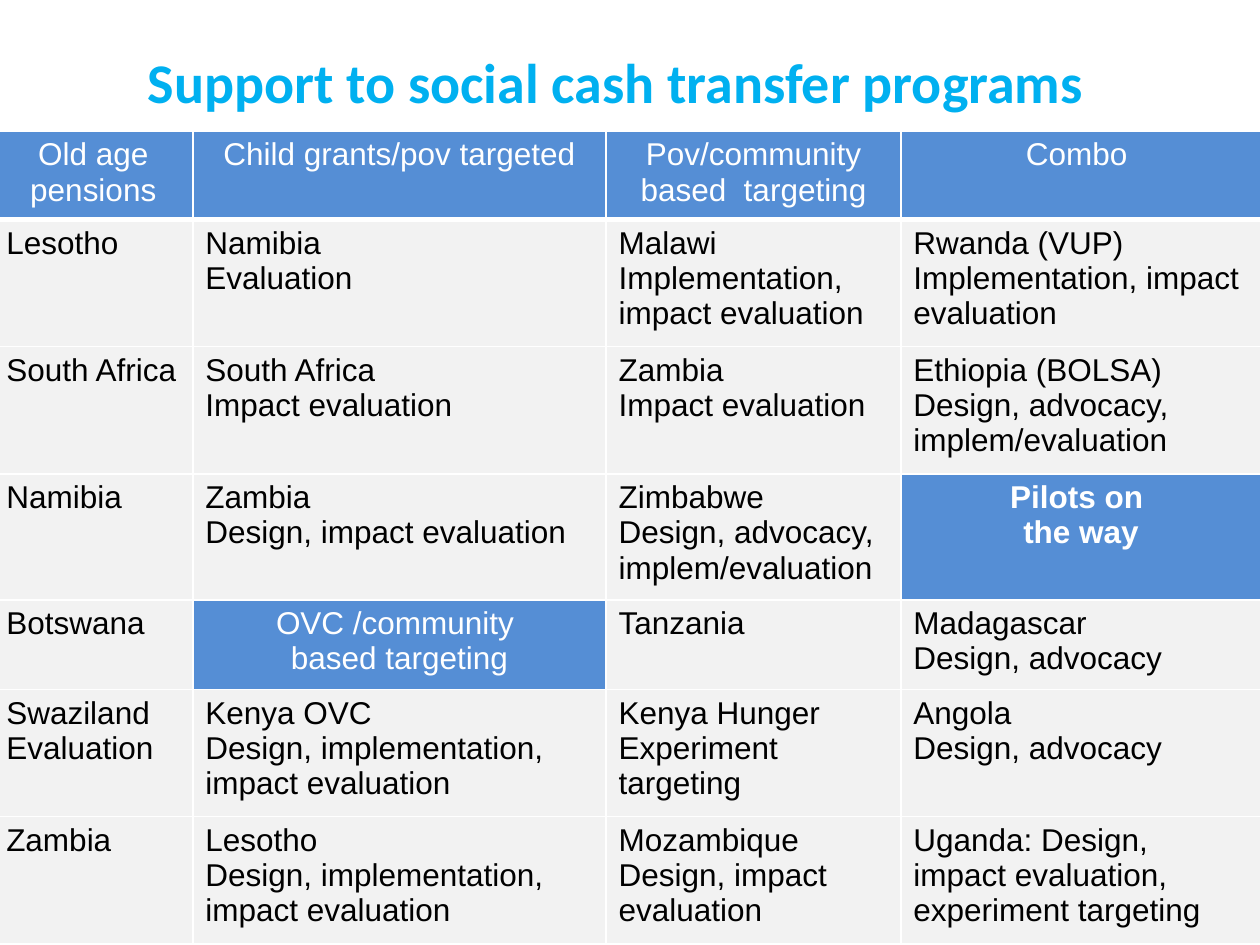
"""Builds a slide with a table of social cash transfer programs."""
from dataclasses import dataclass

from lxml import etree
from pptx import Presentation
from pptx import util as u
from pptx.dml.color import RGBColor
from pptx.enum import text
from pptx.oxml.ns import qn

HUES = {"title": "00B0F0", "head": "558ED5", "body": "F2F2F2",
        "white": "FFFFFF", "black": "000000"}
WIDE, HIGH = u.Inches(10), u.Inches(7.5)
COLS, ROWS = 1000, 750
WIDTHS = (158, 328, 234, 286)
HEIGHTS = (70, 101, 101, 100, 71, 101, 101)


@dataclass(frozen=True)
class Entry:
    words: str
    head: bool = False
    bold: bool = False


def head(words: str, bold: bool = False) -> Entry:
    return Entry(words, True, bold)


GRID = (
    (head("Old age pensions"), head("Child grants/pov targeted"),
     head("Pov/community based  targeting"), head("Combo ")),
    (Entry("Lesotho"), Entry("Namibia\nEvaluation"),
     Entry("Malawi\nImplementation, impact evaluation"),
     Entry("Rwanda (VUP)\nImplementation, impact evaluation")),
    (Entry("South Africa"), Entry("South Africa\nImpact evaluation"),
     Entry("Zambia \vImpact evaluation"),
     Entry("Ethiopia (BOLSA)\vDesign, advocacy, implem/evaluation")),
    (Entry("Namibia"), Entry("Zambia \vDesign, impact evaluation"),
     Entry("Zimbabwe \vDesign, advocacy, implem/evaluation"),
     head("Pilots on \vthe way", True)),
    (Entry("Botswana"), head("OVC /community \vbased targeting"),
     Entry("Tanzania"), Entry("Madagascar\vDesign, advocacy")),
    (Entry("Swaziland\nEvaluation"),
     Entry("Kenya OVC\nDesign, implementation, impact evaluation"),
     Entry("Kenya Hunger\nExperiment targeting"),
     Entry("Angola\nDesign, advocacy")),
    (Entry("Zambia"),
     Entry("Lesotho \vDesign, implementation, impact evaluation"),
     Entry("Mozambique\nDesign, impact evaluation"),
     Entry("Uganda: Design, impact evaluation, experiment targeting")),
)


def across(n: float) -> int:
    return round(WIDE * n / COLS)


def down(n: float) -> int:
    return round(HIGH * n / ROWS)


def style(frame, face: str, size: int, hue: str, bold: bool, mid: bool) -> None:
    for para in frame.paragraphs:
        para.alignment = text.PP_ALIGN.CENTER if mid else text.PP_ALIGN.LEFT
        for run in para.runs:
            font = run.font
            font.name, font.size, font.bold = face, u.Pt(size), bold
            font.color.rgb = RGBColor.from_string(HUES[hue])


def border(cell, base: int) -> None:
    props = cell._tc.get_or_add_tcPr()
    for side, thick in (("L", 1), ("R", 1), ("T", 1), ("B", base)):
        line = etree.SubElement(props, qn(f"a:ln{side}"), w=str(u.Pt(thick)))
        fill = etree.SubElement(line, qn("a:solidFill"))
        etree.SubElement(fill, qn("a:srgbClr"), val=HUES["white"])


def write(cell, entry: Entry, base: int) -> None:
    border(cell, base)
    cell.fill.solid()
    cell.fill.fore_color.rgb = RGBColor.from_string(
        HUES["head" if entry.head else "body"])
    cell.text_frame.text = entry.words
    style(cell.text_frame, "Arial", 18, "white" if entry.head else "black",
          entry.bold, entry.head)


def title(slide, words: str) -> None:
    box = slide.shapes.add_textbox(0, down(-6), across(1000), down(133))
    frame = box.text_frame
    frame.word_wrap = True
    frame.vertical_anchor = text.MSO_ANCHOR.MIDDLE
    frame.margin_right, frame.margin_top = across(32), down(13)
    frame.text = words
    style(frame, "Calibri", 32, "title", True, True)


def table(slide) -> None:
    grid = slide.shapes.add_table(
        len(HEIGHTS), len(WIDTHS), across(-5), down(104),
        across(sum(WIDTHS)), down(sum(HEIGHTS))).table
    for col, n in zip(grid.columns, WIDTHS):
        col.width = across(n)
    for row, n in zip(grid.rows, HEIGHTS):
        row.height = down(n)
    for r, line in enumerate(GRID):
        for c, entry in enumerate(line):
            write(grid.cell(r, c), entry, 1 if r else 3)


def main() -> None:
    deck = Presentation()
    deck.slide_width, deck.slide_height = WIDE, HIGH
    slide = deck.slides.add_slide(deck.slide_layouts[6])
    title(slide, "Support to social cash transfer programs")
    table(slide)
    deck.save("out.pptx")


if __name__ == "__main__":
    main()
